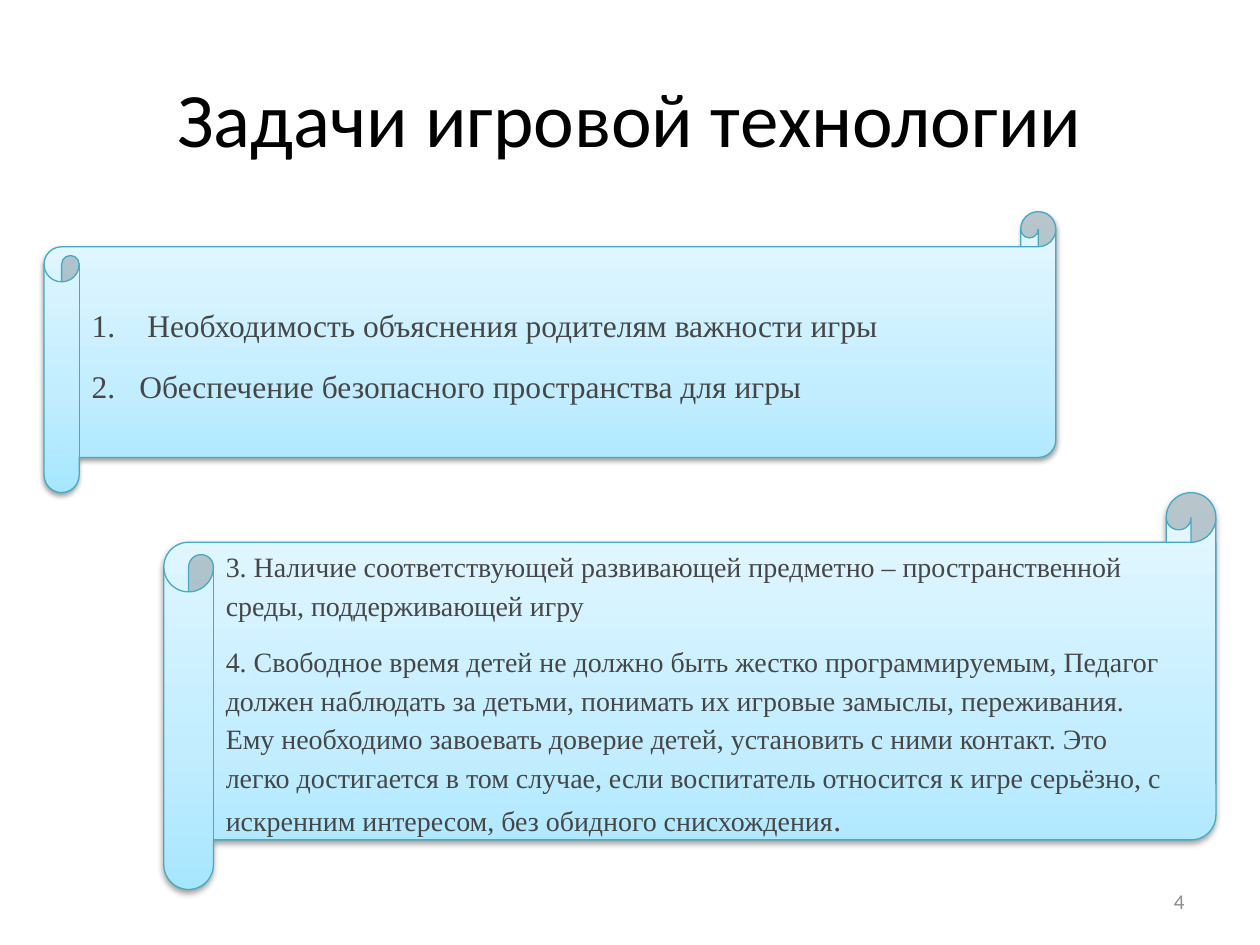
from lxml import etree
from pptx import Presentation
from pptx.dml.color import RGBColor
from pptx.enum.shapes import MSO_SHAPE
from pptx.enum.text import MSO_ANCHOR, PP_ALIGN
from pptx.oxml import parse_xml
from pptx.oxml.ns import nsdecls, qn
from pptx.util import Inches, Pt

SCROLL = MSO_SHAPE.HORIZONTAL_SCROLL
MIDDLE = MSO_ANCHOR.MIDDLE
LEFT, CENTER, RIGHT = PP_ALIGN.LEFT, PP_ALIGN.CENTER, PP_ALIGN.RIGHT
SERIF = "Times New Roman"
GRADIENT = [(0, "A7E6FF"), (35, "C1EDFF"), (100, "E7F8FF")]


def hex_color(value):
    return RGBColor.from_string(value)


def add_text(paragraph, text, *, size, font="Calibri", color="464646", align=LEFT):
    paragraph.alignment = align
    run = paragraph.add_run()
    run.text = text
    run.font.size = Pt(size)
    run.font.name = font
    run.font.color.rgb = hex_color(color)


prs = Presentation()
prs.slide_width, prs.slide_height = Inches(10), Inches(7.5)
slide = prs.slides.add_slide(prs.slide_layouts[5])

title = slide.shapes.title
title.left, title.top = Inches(0.5), Inches(0.3)
title.width, title.height = Inches(9), Inches(1.25)
title.text_frame.vertical_anchor = MIDDLE
add_text(title.text_frame.paragraphs[0], "Задачи игровой технологии",
         size=44, color="000000", align=CENTER)

scrolls = [
    ((0.35, 1.68, 8.03, 2.23), 18, True, [
        [(" Необходимость объяснения родителям важности игры", 18)],
        [("Обеспечение безопасного пространства для игры", 18)],
    ]),
    ((1.3, 3.91, 8.35, 3.15), 16, False, [
        [("3. Наличие соответствующей развивающей предметно – пространственной "
          "среды, поддерживающей игру", 16)],
        [("4. Свободное время детей не должно быть жестко программируемым, Педагог "
          "должен наблюдать за детьми, понимать их игровые замыслы, переживания. "
          "Ему необходимо завоевать доверие детей, установить с ними контакт. Это "
          "легко достигается в том случае, если воспитатель относится к игре серьёзно, "
          "с искренним интересом, без обидного снисхождения", 16), (".", 18)],
    ]),
]

for bounds, base_size, numbered, tasks in scrolls:
    scroll = slide.shapes.add_shape(SCROLL, *map(Inches, bounds))
    scroll.line.color.rgb = hex_color("46AAC5")
    scroll.line.width = Pt(0.75)
    scroll.fill.gradient()
    scroll.fill.gradient_angle = 90
    stops = scroll._element.spPr.find(".//" + qn("a:gsLst"))
    stops.clear()
    for position, color in GRADIENT:
        stop = etree.SubElement(stops, qn("a:gs"), pos=str(position * 1000))
        etree.SubElement(stop, qn("a:srgbClr"), val=color)
    scroll.shadow.inherit = False
    scroll._element.spPr.find(qn("a:effectLst")).append(parse_xml(
        f'<a:outerShdw {nsdecls("a")} blurRad="{Pt(3.1)}" dist="{Pt(1.6)}" '
        'dir="5400000" rotWithShape="0"><a:srgbClr val="000000">'
        '<a:alpha val="38000"/></a:srgbClr></a:outerShdw>'))

    frame = scroll.text_frame
    frame.word_wrap = True
    frame.vertical_anchor = MIDDLE
    for index, runs in enumerate(tasks):
        task = frame.paragraphs[0] if index == 0 else frame.add_paragraph()
        properties = task._p.get_or_add_pPr()
        if numbered:
            properties.set("marL", str(Inches(0.38)))
            properties.set("indent", str(Inches(-0.38)))
            etree.SubElement(properties, qn("a:buFont"), typeface=SERIF)
            etree.SubElement(properties, qn("a:buAutoNum"), type="arabicPeriod")
        tabs = etree.SubElement(properties, qn("a:tabLst"))
        etree.SubElement(tabs, qn("a:tab"), pos=str(Inches(0.35)), algn="l")
        task.font.size = Pt(base_size)
        task.line_spacing = 1.15
        task.space_after = Pt(10)
        for text, size in runs:
            add_text(task, text, size=size, font=SERIF)

page_number = slide.shapes.add_textbox(Inches(7.17), Inches(6.95), Inches(2.33), Inches(0.4))
page_number.text_frame.word_wrap = True
page_number.text_frame.vertical_anchor = MIDDLE
add_text(page_number.text_frame.paragraphs[0], "4", size=12, color="8C8C8C", align=RIGHT)

prs.save("out.pptx")
